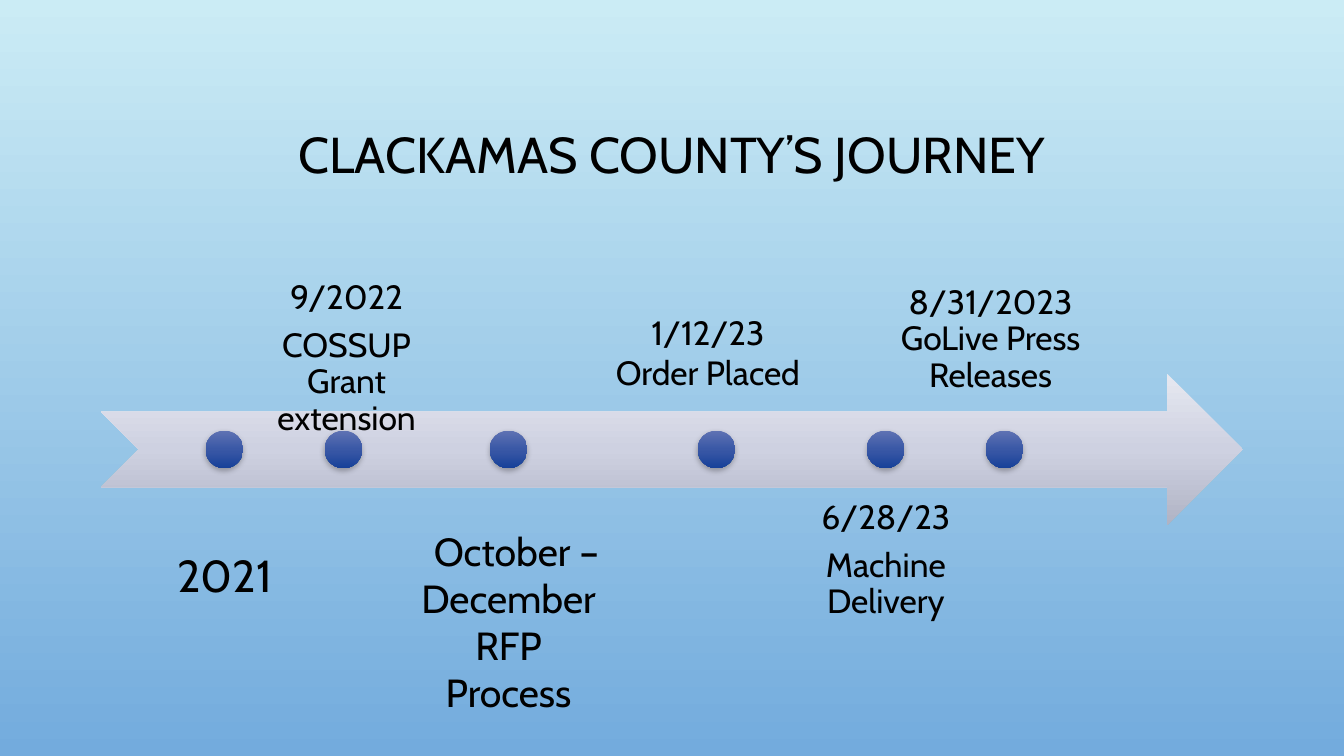
import copy
import pptx
import pptx.util
import pptx.dml.color
import pptx.enum.shapes
import pptx.enum.text
import pptx.oxml
import pptx.oxml.ns

Cm = pptx.util.Cm
Pt = pptx.util.Pt
RGB = pptx.dml.color.RGBColor
SHAPE = pptx.enum.shapes.MSO_SHAPE
ALIGN = pptx.enum.text.PP_ALIGN
ANCHOR = pptx.enum.text.MSO_ANCHOR

BLACK = RGB(0x00, 0x00, 0x00)
SKY = [RGB(0xCB, 0xEC, 0xF5), RGB(0x73, 0xAB, 0xDD)]
SILVER = [RGB(0xE6, 0xE8, 0xF0), RGB(0xCE, 0xD1, 0xE1), RGB(0xB0, 0xB3, 0xC4)]
NAVY = [RGB(0x5E, 0x72, 0xB3), RGB(0x3A, 0x58, 0xA6), RGB(0x17, 0x41, 0x99)]

FONT = "Cabin"
DOT = 0.95
DOTS = [2.64, 5.64, 9.8, 15.04, 19.3, 22.3]

# Paragraph formats: event labels are tight, notes use plain spacing
TIGHT = {"line_spacing": 0.9, "space_after": Pt(8.4)}
PLAIN = {}

# Left, top, width, height from the arrow's corner; size, inset, format, lines
LABELS = [
    (0, 4.07, 6.25, 2.57, 32, 0.47, TIGHT, ["2021"]),
    (3.07, -2.82, 6.25, 3.81, 24, 0.47, TIGHT,
     ["9/2022", "COSSUP Grant extension"]),
    (12.47, -1.7, 5.66, 2.31, 24, 0.25, PLAIN, ["1/12/23", "Order Placed"]),
    (16.66, 2.72, 6.25, 3.81, 24, 0.47, TIGHT,
     ["6/28/23", "Machine Delivery"]),
]
LAUNCH = (19.3, -2.82, 6.25, 3.81, 24, 0.47, TIGHT,
          ["8/31/2023 GoLive Press Releases"])
BIDS = (7.72, 3.74, 5.11, 3.84, 28, 0.25, PLAIN,
        ["October – December", "RFP Process"])


def shade(fill, tones):
    """Fill from top to bottom with evenly spaced tones."""
    fill.gradient()
    fill.gradient_angle = 270
    first = fill._fill._gradFill.gsLst[0]
    for _ in tones[2:]:
        first.addnext(copy.deepcopy(first))
    for i, (stop, tone) in enumerate(zip(fill.gradient_stops, tones)):
        stop.color.rgb = tone
        stop.position = i / (len(tones) - 1)


def shape(slide, kind, box, tones):
    item = slide.shapes.add_shape(kind, *map(Cm, box))
    item.shadow.inherit = False
    item.line.fill.background()
    shade(item.fill, tones)
    return item


def drop(item):
    """Give a shape a soft shadow below it."""
    ns = pptx.oxml.ns.nsdecls("a")
    item._element.spPr.find(pptx.oxml.ns.qn("a:effectLst")).append(
        pptx.oxml.parse_xml(
            f'<a:outerShdw {ns} blurRad="50800" dist="25400" dir="5400000">'
            '<a:srgbClr val="000000"><a:alpha val="28000"/></a:srgbClr>'
            '</a:outerShdw>'))


def write(slide, box, size, inset, form, lines, anchor=ANCHOR.TOP):
    frame = slide.shapes.add_textbox(*map(Cm, box)).text_frame
    side = Cm(inset)
    edge = side if form is TIGHT else Cm(0.13)
    for name, value in {"word_wrap": True, "vertical_anchor": anchor,
                        "margin_left": side, "margin_right": side,
                        "margin_top": edge, "margin_bottom": edge}.items():
        setattr(frame, name, value)
    frame.text = "\n".join(lines)
    for para in frame.paragraphs:
        for name, value in {"alignment": ALIGN.CENTER, **form}.items():
            setattr(para, name, value)
        for run in para.runs:
            for name, value in {"name": FONT, "size": Pt(size)}.items():
                setattr(run.font, name, value)
            run.font.color.rgb = BLACK
    return frame


def title(slide, box):
    write(slide, box, 36, 0.25, {"line_spacing": 0.9},
          ["CLACKAMAS COUNTY’S JOURNEY"], ANCHOR.MIDDLE)


def track(slide, box):
    """Arrow with its dots along the middle."""
    left, top, _, high = box
    shape(slide, SHAPE.NOTCHED_RIGHT_ARROW, box, SILVER)
    for x in DOTS:
        spot = (left + x, top + (high - DOT) / 2, DOT, DOT)
        drop(shape(slide, SHAPE.OVAL, spot, NAVY))


def events(slide, box):
    """Labels above and below the arrow."""
    def label(item, anchor=ANCHOR.TOP):
        x, y, wide, high, *rest = item
        spot = (box[0] + x, box[1] + y, wide, high)
        return write(slide, spot, *rest, anchor)

    for item in LABELS:
        label(item)
    label(LAUNCH, ANCHOR.BOTTOM)
    # The first line of the bidding note is set in a little
    note = label(BIDS)
    note.paragraphs[0]._p.get_or_add_pPr().set("indent", str(Cm(0.4)))


def main():
    deck = pptx.Presentation()
    deck.slide_width, deck.slide_height = Cm(33.87), Cm(19.05)
    slide = deck.slides.add_slide(deck.slide_layouts[6])
    shade(slide.background.fill, SKY)
    title(slide, (2.54, 1.73, 28.78, 4.45))
    lane = (2.54, 9.42, 28.78, 3.81)
    track(slide, lane)
    events(slide, lane)
    deck.save("out.pptx")


if __name__ == "__main__":
    main()
